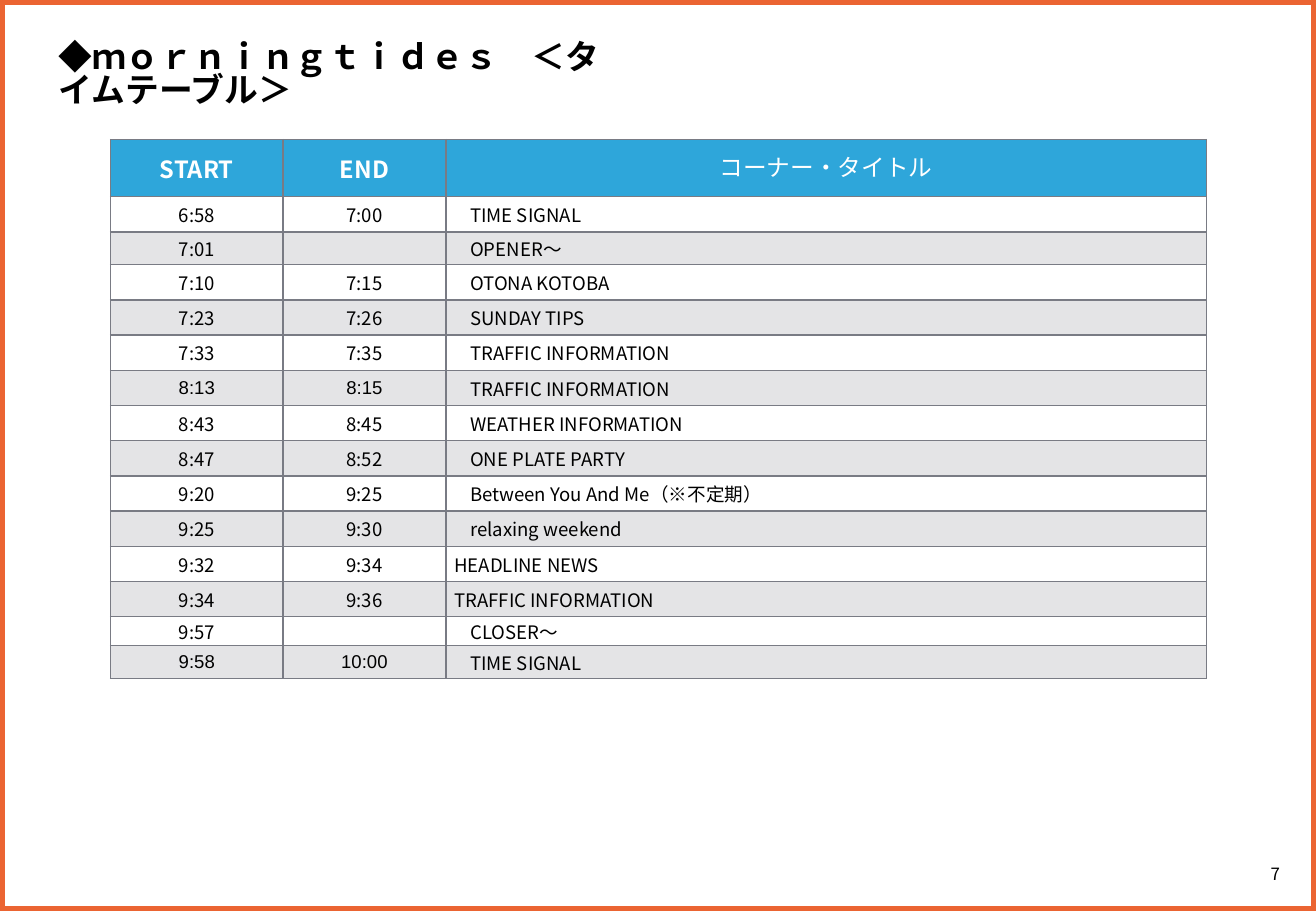
from dataclasses import dataclass

from lxml.etree import SubElement
from pptx import Presentation
from pptx.dml.color import RGBColor
from pptx.enum.shapes import MSO_SHAPE
from pptx.enum.text import MSO_ANCHOR, MSO_AUTO_SIZE, PP_ALIGN
from pptx.oxml import parse_xml
from pptx.oxml.ns import nsdecls, qn
from pptx.util import Pt

EMU_PER_PX = 9144  # 100 px to the inch


@dataclass(frozen=True)
class Theme:
    font: str = "Noto Sans CJK JP"
    alternate_font: str = "Arial"
    text: str = "000000"
    header_text: str = "FFFFFF"
    header_fill: str = "2EA6DA"
    grey: str = "797B84"
    frame: str = "EB6432"
    title_size: int = 20
    header_size: int = 14
    cell_size: int = 11
    number_size: int = 10
    band_alpha: int = 20000


THEME = Theme()

COLUMN_WIDTHS = [142, 134, 626]
HEADER_HEIGHT = 47
ROW_HEIGHT = 29
SHORT_ROWS = {"7:01": 27, "9:57": 24, "9:58": 27}
ALTERNATE_FONT_ROWS = {"8:13", "9:58"}
WIDE_INDENT, NARROW_INDENT = 20, 7
NARROW_ROWS = {"9:32", "9:34"}

HEADERS = ["START", "END", "コーナー・タイトル"]
PROGRAMME = [
    ("6:58", "7:00", "TIME SIGNAL"),
    ("7:01", "", "OPENER〜"),
    ("7:10", "7:15", "OTONA KOTOBA"),
    ("7:23", "7:26", "SUNDAY TIPS"),
    ("7:33", "7:35", "TRAFFIC INFORMATION"),
    ("8:13", "8:15", "TRAFFIC INFORMATION"),
    ("8:43", "8:45", "WEATHER INFORMATION"),
    ("8:47", "8:52", "ONE PLATE PARTY"),
    ("9:20", "9:25", "Between You And Me（※不定期）"),
    ("9:25", "9:30", "relaxing weekend"),
    ("9:32", "9:34", "HEADLINE NEWS"),
    ("9:34", "9:36", "TRAFFIC INFORMATION"),
    ("9:57", "", "CLOSER〜"),
    ("9:58", "10:00", "TIME SIGNAL"),
]


def px(length):
    return length * EMU_PER_PX


def box(*lengths):
    return [px(length) for length in lengths]


def add_run(paragraph, text, size, color=THEME.text, bold=False, font=THEME.font):
    run = paragraph.add_run()
    run.text = text
    run.font.size = Pt(size)
    run.font.bold = bold
    run.font.color.rgb = RGBColor.from_string(color)
    run.font.name = font
    SubElement(run.font._element, qn("a:ea"), typeface=font)


def add_frame(slide):
    frame = slide.shapes.add_shape(MSO_SHAPE.RECTANGLE, *box(0, 0, 1083, 750))
    frame.shadow.inherit = False
    frame.fill.background()
    frame.line.color.rgb = RGBColor.from_string(THEME.frame)
    frame.line.width = Pt(6)


def add_title(slide):
    title = slide.shapes.title
    title.left, title.top, title.width, title.height = box(38, 31, 488, 44)
    text_frame = title.text_frame
    text_frame.word_wrap = True
    text_frame.auto_size = MSO_AUTO_SIZE.SHAPE_TO_FIT_TEXT
    text_frame.vertical_anchor = MSO_ANCHOR.TOP
    paragraph = text_frame.paragraphs[0]
    paragraph.alignment = PP_ALIGN.LEFT
    paragraph.line_spacing = 0.81
    add_run(paragraph, "◆", THEME.title_size)
    add_run(paragraph, "ｍｏｒｎｉｎｇｔｉｄｅｓ　＜タイムテーブル＞", THEME.title_size, bold=True)


def add_page_number(slide):
    text_frame = slide.shapes.add_textbox(*box(1016, 702, 67, 35)).text_frame
    text_frame.word_wrap = True
    text_frame.vertical_anchor = MSO_ANCHOR.MIDDLE
    paragraph = text_frame.paragraphs[0]
    paragraph.alignment = PP_ALIGN.CENTER
    add_run(paragraph, "7", THEME.number_size)


def set_borders(cell):
    properties = cell._tc.get_or_add_tcPr()
    for index, side in enumerate(["lnL", "lnR", "lnT", "lnB"]):
        border = parse_xml(
            f'<a:{side} {nsdecls("a")} w="{Pt(1)}"><a:solidFill>'
            f'<a:srgbClr val="{THEME.grey}"/></a:solidFill></a:{side}>'
        )
        properties.insert(index, border)


def set_fill(cell, color, alpha=None):
    cell.fill.solid()
    cell.fill.fore_color.rgb = RGBColor.from_string(color)
    if alpha:
        color_element = cell._tc.tcPr.find(qn("a:solidFill")).find(qn("a:srgbClr"))
        SubElement(color_element, qn("a:alpha"), val=str(alpha))


def fill_cell(cell, text, size, indent=None, **style):
    cell.margin_left = px(indent or 0)
    cell.margin_right = cell.margin_top = cell.margin_bottom = 0
    cell.vertical_anchor = MSO_ANCHOR.MIDDLE
    paragraph = cell.text_frame.paragraphs[0]
    paragraph.alignment = PP_ALIGN.LEFT if indent else PP_ALIGN.CENTER
    if text:
        add_run(paragraph, text, size, **style)
    else:
        # Keeps an empty cell from stretching its row
        SubElement(paragraph._p, qn("a:endParaRPr"), sz=str(size * 100))
    set_borders(cell)


def add_timetable(slide):
    heights = [HEADER_HEIGHT] + [SHORT_ROWS.get(row[0], ROW_HEIGHT) for row in PROGRAMME]
    table = slide.shapes.add_table(
        len(heights), len(HEADERS), *box(91, 115, sum(COLUMN_WIDTHS), sum(heights))
    ).table
    table.first_row = table.horz_banding = False
    for column, width in zip(table.columns, COLUMN_WIDTHS):
        column.width = px(width)
    for row, height in zip(table.rows, heights):
        row.height = px(height)

    # Header row
    for column, text in enumerate(HEADERS):
        is_title = column == 2
        cell = table.cell(0, column)
        fill_cell(cell, text, THEME.header_size, color=THEME.header_text,
                  bold=not is_title, font=THEME.alternate_font if is_title else THEME.font)
        set_fill(cell, THEME.header_fill)

    # Programme rows, every second one shaded
    for row, entry in enumerate(PROGRAMME, start=1):
        start = entry[0]
        time_font = THEME.alternate_font if start in ALTERNATE_FONT_ROWS else THEME.font
        title_indent = NARROW_INDENT if start in NARROW_ROWS else WIDE_INDENT
        for column, text in enumerate(entry):
            cell = table.cell(row, column)
            if column == 2:
                fill_cell(cell, text, THEME.cell_size, indent=title_indent)
            else:
                fill_cell(cell, text, THEME.cell_size, font=time_font)
            if row % 2:
                cell.fill.background()
            else:
                set_fill(cell, THEME.grey, THEME.band_alpha)


def main():
    presentation = Presentation()
    presentation.slide_width, presentation.slide_height = box(1083, 750)
    slide = presentation.slides.add_slide(presentation.slide_layouts[5])
    add_page_number(slide)
    add_frame(slide)
    add_title(slide)
    add_timetable(slide)
    presentation.save("out.pptx")


if __name__ == "__main__":
    main()
